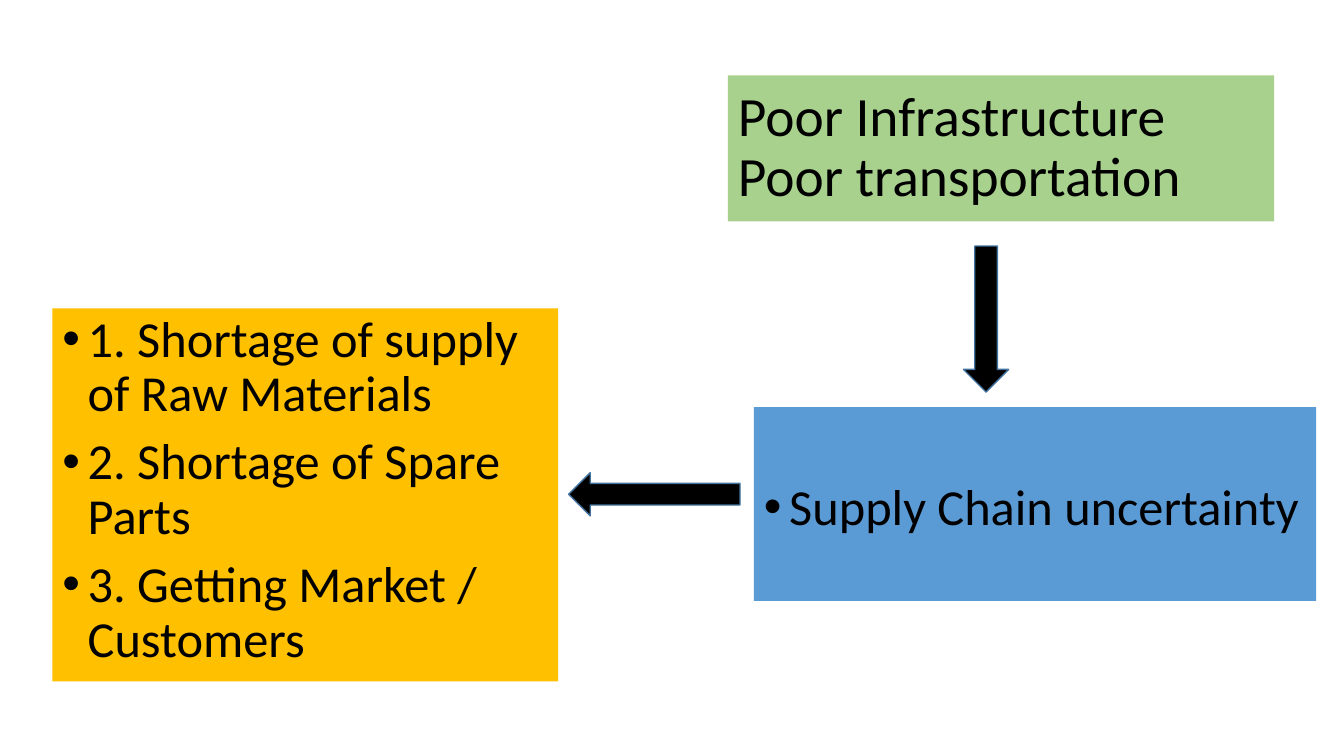
from lxml import etree
from pptx import Presentation
from pptx import util as u
from pptx.dml.color import RGBColor
from pptx.enum import shapes, text
from pptx.oxml.ns import qn

GREEN = RGBColor(0xA9, 0xD1, 0x8E)
AMBER = RGBColor(0xFF, 0xC0, 0x00)
BLUE = RGBColor(0x5B, 0x9B, 0xD5)
EDGE = RGBColor(0x43, 0x73, 0x9E)
BLACK = RGBColor(0, 0, 0)


def style(shape, fill):
    shape.fill.solid()
    shape.fill.fore_color.rgb = fill
    shape.shadow.inherit = False


def write(para, words, size):
    para.alignment = text.PP_ALIGN.LEFT
    para.line_spacing = 0.9
    run = para.add_run()
    run.text = words
    run.font.size = u.Pt(size)
    run.font.name = "Calibri"
    run.font.color.rgb = BLACK


deck = Presentation()
deck.slide_width, deck.slide_height = u.Cm(33.87), u.Cm(19.05)
slide = deck.slides.add_slide(deck.slide_layouts[5])

# Title: the causes
title = slide.shapes.title
title.left, title.top = u.Cm(18.34), u.Cm(1.9)
title.width, title.height = u.Cm(13.77), u.Cm(3.68)
style(title, GREEN)
frame = title.text_frame
frame.auto_size = text.MSO_AUTO_SIZE.NONE
frame.vertical_anchor = text.MSO_ANCHOR.MIDDLE
para = frame.paragraphs[0]
write(para, "Poor Infrastructure", 39.6)
para.add_line_break()
write(para, "Poor transportation", 39.6)

# Bulleted boxes: fill, place, top inset, items
boxes = [
    (AMBER, (1.32, 7.77, 12.75, 9.4), 0.13,
     ["1. Shortage of supply of Raw Materials",
      "2. Shortage of Spare Parts",
      "3. Getting Market / Customers"]),
    (BLUE, (19, 10.26, 14.17, 4.88), 1.88, ["Supply Chain uncertainty"]),
]
for fill, place, inset, items in boxes:
    box = slide.shapes.add_textbox(*[u.Cm(n) for n in place])
    style(box, fill)
    frame = box.text_frame
    frame.word_wrap = True
    frame.vertical_anchor = text.MSO_ANCHOR.TOP
    frame.margin_top = u.Cm(inset)
    for i, item in enumerate(items):
        para = frame.add_paragraph() if i else frame.paragraphs[0]
        props = para._p.get_or_add_pPr()
        props.set("marL", str(u.Cm(0.64)))
        props.set("indent", str(-u.Cm(0.64)))
        etree.SubElement(props, qn("a:buFont"), typeface="Arial")
        etree.SubElement(props, qn("a:buChar"), char="•")
        if i:
            para.space_before = u.Pt(10)
        write(para, item, 36)

# Block arrows
arrows = [
    (shapes.MSO_SHAPE.DOWN_ARROW, (24.28, 6.2, 1.14, 3.68)),
    (shapes.MSO_SHAPE.LEFT_ARROW, (14.33, 11.91, 4.32, 1.09)),
]
for kind, place in arrows:
    arrow = slide.shapes.add_shape(kind, *[u.Cm(n) for n in place])
    style(arrow, BLACK)
    arrow.line.color.rgb = EDGE
    arrow.line.width = u.Pt(1)

deck.save("out.pptx")
